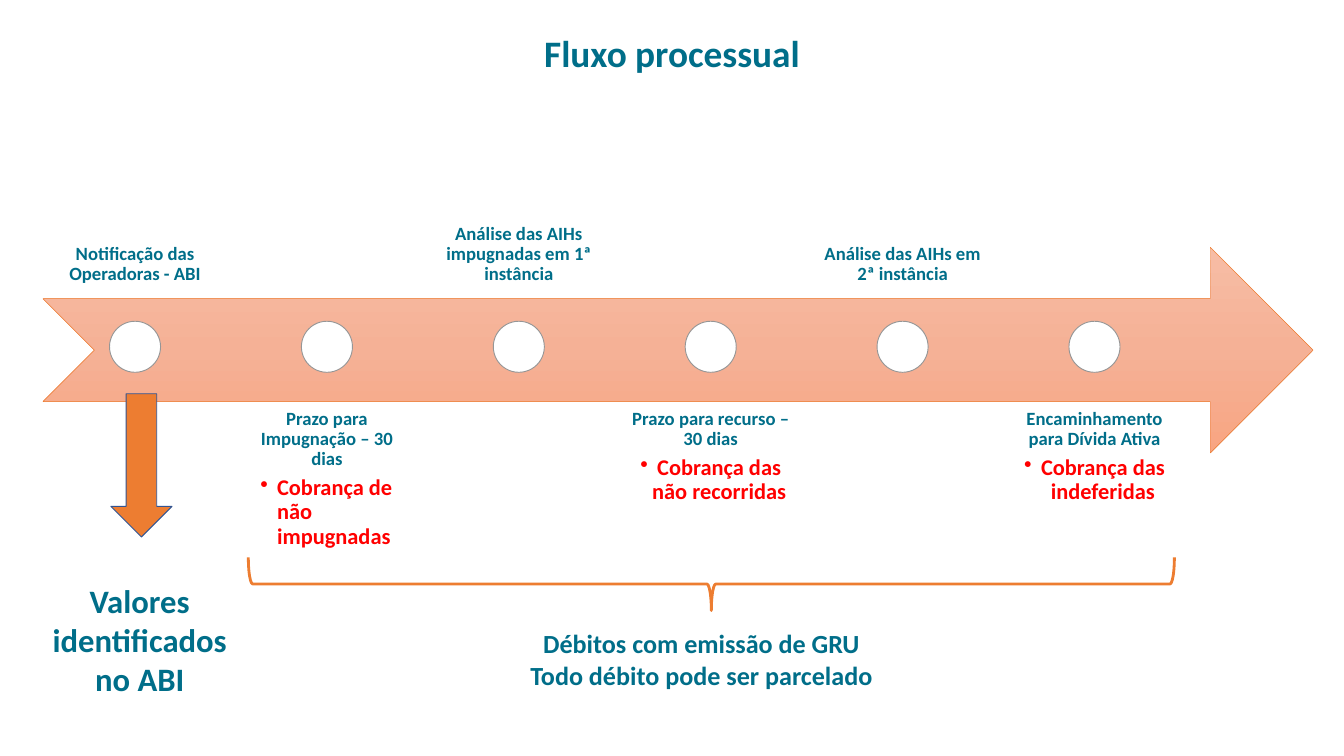
from copy import deepcopy
from dataclasses import dataclass

from pptx import Presentation
from pptx.dml.color import RGBColor
from pptx.enum.shapes import MSO_SHAPE as Preset
from pptx.enum.text import MSO_ANCHOR as Anchor, MSO_AUTO_SIZE as AutoSize, PP_ALIGN as Align
from pptx.oxml.ns import qn
from pptx.shapes.autoshape import Shape
from pptx.slide import Slide
from pptx.text.text import TextFrame, _Paragraph as Paragraph
from pptx.util import Pt

FONT = "Calibri"
TEAL = RGBColor(0x00, 0x6E, 0x89)
RED = RGBColor(0xFF, 0x00, 0x00)
ORANGE = RGBColor(0xED, 0x7D, 0x31)
NAVY = RGBColor(0x32, 0x54, 0x91)
GREY = RGBColor(0x96, 0x96, 0x96)
WHITE = RGBColor(0xFF, 0xFF, 0xFF)
BAND_STOPS = [
    (0, RGBColor(0xF7, 0xBD, 0xA5)),
    (0.5, RGBColor(0xF5, 0xB1, 0x96)),
    (1, RGBColor(0xF8, 0xA5, 0x82)),
]

# Timeline grid, in points
STAGE_STEP = 205.6
LABEL_LEFT, LABEL_WIDTH, LABEL_HEIGHT = 46.8, 195.8, 220.3
LABEL_TOP_ABOVE, LABEL_TOP_BELOW = 96.5, 427
LABEL_INSET = 11.5
DOT_TOP, DOT_SIZE = 344.2, 54.7
BULLET_HANG = 18


@dataclass
class Box:
    left: float
    top: float
    width: float
    height: float

    def lengths(self) -> tuple:
        return Pt(self.left), Pt(self.top), Pt(self.width), Pt(self.height)


@dataclass
class Stage:
    label: str
    charge: str = ""
    charge_align: Align = Align.CENTER
    charge_indent: float = BULLET_HANG


STAGES = [
    Stage("Notificação das Operadoras - ABI"),
    Stage("Prazo para Impugnação – 30 dias", "Cobrança de não impugnadas", Align.LEFT, 33),
    Stage("Análise das AIHs impugnadas em 1ª instância"),
    Stage("Prazo para recurso – 30 dias", "Cobrança das não recorridas"),
    Stage("Análise das AIHs em 2ª instância"),
    Stage("Encaminhamento para Dívida Ativa", "Cobrança das indeferidas"),
]


def write(paragraph: Paragraph, text: str, size: float,
          color: RGBColor = TEAL, align: Align = Align.CENTER) -> None:
    paragraph.text = text
    paragraph.alignment = align
    font = paragraph.font
    font.name, font.size, font.bold = FONT, Pt(size), True
    font.color.rgb = color


def add_bullet(paragraph: Paragraph, indent: float) -> None:
    properties = paragraph._p.get_or_add_pPr()
    properties.set("marL", str(Pt(indent)))
    properties.set("indent", str(-Pt(BULLET_HANG)))
    bullet = properties.makeelement(qn("a:buChar"), {"char": "•"})
    properties.append(bullet)


def add_preset(slide: Slide, preset: Preset, box: Box, line: RGBColor,
               line_width: float, fill: RGBColor | None = None) -> Shape:
    shape = slide.shapes.add_shape(preset, *box.lengths())
    shape.shadow.inherit = False
    shape.line.color.rgb = line
    shape.line.width = Pt(line_width)
    if fill is None:
        shape.fill.background()
    else:
        shape.fill.solid()
        shape.fill.fore_color.rgb = fill
    return shape


def add_text_box(slide: Slide, box: Box) -> TextFrame:
    frame = slide.shapes.add_textbox(*box.lengths()).text_frame
    frame.word_wrap = True
    return frame


def add_caption(slide: Slide, box: Box, lines: list[str], size: float) -> None:
    frame = add_text_box(slide, box)
    frame.auto_size = AutoSize.SHAPE_TO_FIT_TEXT
    for i, line in enumerate(lines):
        paragraph = frame.add_paragraph() if i else frame.paragraphs[0]
        write(paragraph, line, size)


def add_band(slide: Slide) -> None:
    band = add_preset(slide, Preset.NOTCHED_RIGHT_ARROW, Box(46.1, 265, 1360.8, 220.3), ORANGE, 0.5)
    band.fill.gradient()
    band.fill.gradient_angle = 270
    # The default gradient has two stops; add the third
    stop_list = band._element.spPr.find(qn("a:gradFill")).find(qn("a:gsLst"))
    stop_list.append(deepcopy(stop_list[0]))
    for stop, (position, color) in zip(band.fill.gradient_stops, BAND_STOPS):
        stop.position = position
        stop.color.rgb = color


def add_stage(slide: Slide, index: int, stage: Stage) -> None:
    above = index % 2 == 0
    left = LABEL_LEFT + index * STAGE_STEP
    top = LABEL_TOP_ABOVE if above else LABEL_TOP_BELOW
    frame = add_text_box(slide, Box(left, top, LABEL_WIDTH, LABEL_HEIGHT))
    frame.margin_left = frame.margin_right = Pt(LABEL_INSET)
    frame.margin_top = frame.margin_bottom = Pt(LABEL_INSET)
    frame.vertical_anchor = Anchor.BOTTOM if above else Anchor.TOP

    label = frame.paragraphs[0]
    label.line_spacing = 0.9
    label.space_after = Pt(7)
    write(label, stage.label, 20)
    if stage.charge:
        charge = frame.add_paragraph()
        charge.level = 1
        charge.line_spacing = 0.9
        charge.space_after = Pt(3.6)
        add_bullet(charge, stage.charge_indent)
        write(charge, stage.charge, 24, RED, stage.charge_align)

    dot_left = left + (LABEL_WIDTH - DOT_SIZE) / 2
    add_preset(slide, Preset.OVAL, Box(dot_left, DOT_TOP, DOT_SIZE, DOT_SIZE), GREY, 1, WHITE)


def main() -> None:
    presentation = Presentation()
    presentation.slide_width, presentation.slide_height = Pt(1440), Pt(810)
    slide = presentation.slides.add_slide(presentation.slide_layouts[5])

    # Title
    title = slide.shapes.title
    title.left, title.top, title.width, title.height = Box(551.5, 15.1, 337, 82.1).lengths()
    title.text_frame.auto_size = AutoSize.NONE
    title.text_frame.vertical_anchor = Anchor.MIDDLE
    write(title.text_frame.paragraphs[0], "Fluxo processual", 40)

    # Timeline
    add_band(slide)
    for index, stage in enumerate(STAGES):
        add_stage(slide, index, stage)

    # Debts gathered under the brace
    brace = add_preset(slide, Preset.LEFT_BRACE, Box(733.7, 129.6, 56.9, 992.2), ORANGE, 3)
    brace.rotation = 270
    add_caption(slide, Box(456.5, 668.9, 589.7, 74.9),
                ["Débitos com emissão de GRU", "Todo débito pode ser parcelado"], 28)

    # Values coming out of the first stage
    add_preset(slide, Preset.DOWN_ARROW, Box(118.8, 421.9, 65.5, 153.4), NAVY, 1, ORANGE)
    add_caption(slide, Box(33.1, 618.5, 233.3, 134.6), ["Valores identificados no ABI"], 35)

    presentation.save("out.pptx")


if __name__ == "__main__":
    main()
